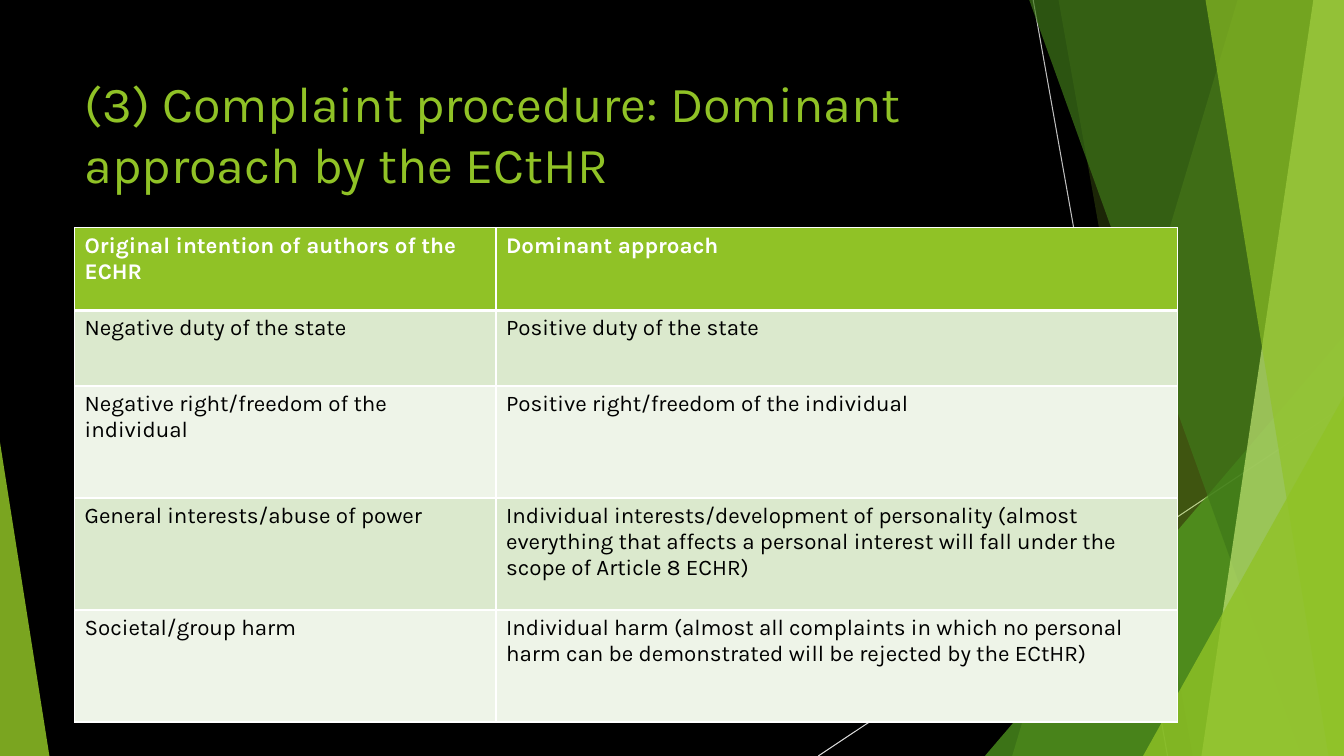
from lxml import etree
from pptx import Presentation
from pptx.dml import color
from pptx.enum import shapes, text
from pptx.oxml import ns
from pptx.util import Pt

FONT = "Karla"
GREEN, WHITE, BLACK = "90C226", "FFFFFF", "000000"
ROW_FILLS = ("DBE9CD", "EEF4E8")
WIDTH, HEIGHT = 960, 540

# Top-left, bottom-right and bottom-left edges of the right-hand bands
BANDS = [
    (884.2, 723, GREEN, 30),
    (756, 852, GREEN, 20),
    (735, 929.5, "3F7819", 70),
    (938.2, 858.2, "C0E474", 70),
    (861, 949, GREEN, 65),
]
TABLE_ROWS = [
    ("Original intention of authors of the ECHR", "Dominant approach"),
    ("Negative duty of the state", "Positive duty of the state"),
    ("Negative right/freedom of the individual",
     "Positive right/freedom of the individual"),
    ("General interests/abuse of power",
     "Individual interests/development of personality (almost everything that "
     "affects a personal interest will fall under the scope of Article 8 ECHR)"),
    ("Societal/group harm",
     "Individual harm (almost all complaints in which no personal harm can be "
     "demonstrated will be rejected by the ECtHR)"),
]
ROW_HEIGHTS = (59, 54, 80, 80, 80)
COLUMN_WIDTHS = (301, 486.7)


def rgb(value):
    return color.RGBColor.from_string(value)


def fill_shape(shape, fill, opacity):
    """Give a shape a partly transparent fill without line or shadow."""
    shape.shadow.inherit = False
    shape.line.fill.background()
    shape.fill.solid()
    shape.fill.fore_color.rgb = rgb(fill)
    solid_color = shape.fill._xPr.find(".//" + ns.qn("a:srgbClr"))
    etree.SubElement(solid_color, ns.qn("a:alpha"), val=str(opacity * 1000))


def add_band(slide, top_x, bottom_x, fill, opacity):
    """Add a full-height band from a slanted edge to the right of the slide."""
    builder = slide.shapes.build_freeform(Pt(top_x), Pt(-0.6))
    builder.add_line_segments([
        (Pt(WIDTH), Pt(-0.6)), (Pt(WIDTH), Pt(HEIGHT)), (Pt(bottom_x), Pt(HEIGHT))])
    fill_shape(builder.convert_to_shape(), fill, opacity)


def add_corner(slide, left, top, width, apex, fill, opacity):
    """Add a triangle that stands on the bottom edge of the slide."""
    triangle = slide.shapes.add_shape(
        shapes.MSO_SHAPE.ISOSCELES_TRIANGLE,
        Pt(left), Pt(top), Pt(width), Pt(HEIGHT - top))
    triangle.adjustments[0] = apex
    fill_shape(triangle, fill, opacity)


def add_thin_line(slide, start_x, start_y, end_x, end_y, line_color):
    line = slide.shapes.add_connector(
        shapes.MSO_CONNECTOR.STRAIGHT,
        Pt(start_x), Pt(start_y), Pt(end_x), Pt(end_y))
    line.line.color.rgb = rgb(line_color)
    line.line.width = Pt(0.75)
    etree.SubElement(line._element.spPr, ns.qn("a:effectLst"))


def add_text(paragraph, content, size, font_color, bold=False):
    run = paragraph.add_run()
    run.text = content
    run.font.name = FONT
    run.font.size = Pt(size)
    run.font.bold = bold
    run.font.color.rgb = rgb(font_color)


def set_title(slide, content):
    title = slide.shapes.title
    title.left, title.top, title.width, title.height = (
        Pt(53.3), Pt(48.2), Pt(676.8), Pt(103.7))
    frame = title.text_frame
    frame.word_wrap = True
    frame.auto_size = text.MSO_AUTO_SIZE.NONE
    frame.vertical_anchor = text.MSO_ANCHOR.TOP
    paragraph = frame.paragraphs[0]
    paragraph.alignment = text.PP_ALIGN.LEFT
    add_text(paragraph, content, 36, GREEN)
    title.element.getparent().append(title.element)


def set_borders(cell, top, bottom):
    properties = cell._tc.get_or_add_tcPr()
    for side, width in (("L", 1), ("R", 1), ("T", top), ("B", bottom)):
        border = etree.SubElement(
            properties, ns.qn("a:ln" + side), w=str(Pt(width)))
        fill = etree.SubElement(border, ns.qn("a:solidFill"))
        etree.SubElement(fill, ns.qn("a:srgbClr"), val=WHITE)


def add_comparison_table(slide):
    table = slide.shapes.add_table(
        len(TABLE_ROWS), len(COLUMN_WIDTHS), Pt(53.3), Pt(162.7),
        Pt(sum(COLUMN_WIDTHS)), Pt(sum(ROW_HEIGHTS))).table
    for column, width in zip(table.columns, COLUMN_WIDTHS):
        column.width = Pt(width)
    for index, (row, height, contents) in enumerate(
            zip(table.rows, ROW_HEIGHTS, TABLE_ROWS)):
        row.height = Pt(height)
        header = index == 0
        for cell, content in zip(row.cells, contents):
            set_borders(cell, 3 if index == 1 else 1, 3 if header else 1)
            cell.fill.solid()
            cell.fill.fore_color.rgb = rgb(
                GREEN if header else ROW_FILLS[(index - 1) % 2])
            add_text(cell.text_frame.paragraphs[0], content, 16,
                     WHITE if header else BLACK, header)


def add_decoration(slide):
    add_thin_line(slide, 738, 0, 834, HEIGHT, "BFBFBF")
    add_thin_line(slide, WIDTH, 290, 584.5, HEIGHT, "D9D9D9")
    for band in BANDS[:2]:
        add_band(slide, *band)
    add_corner(slide, 703.5, 239.8, 256.5, 1, "54A021", 72)
    for band in BANDS[2:]:
        add_band(slide, *band)
    add_corner(slide, 816.5, 283, 143.5, 1, GREEN, 80)
    add_corner(slide, 0, 316, 35.3, 0, GREEN, 85)


def main():
    presentation = Presentation()
    presentation.slide_width, presentation.slide_height = Pt(WIDTH), Pt(HEIGHT)
    slide = presentation.slides.add_slide(
        presentation.slide_layouts.get_by_name("Title Only"))
    slide.background.fill.solid()
    slide.background.fill.fore_color.rgb = rgb(BLACK)
    add_decoration(slide)
    set_title(slide, "(3) Complaint procedure: Dominant approach by the ECtHR")
    add_comparison_table(slide)
    presentation.save("out.pptx")


if __name__ == "__main__":
    main()
